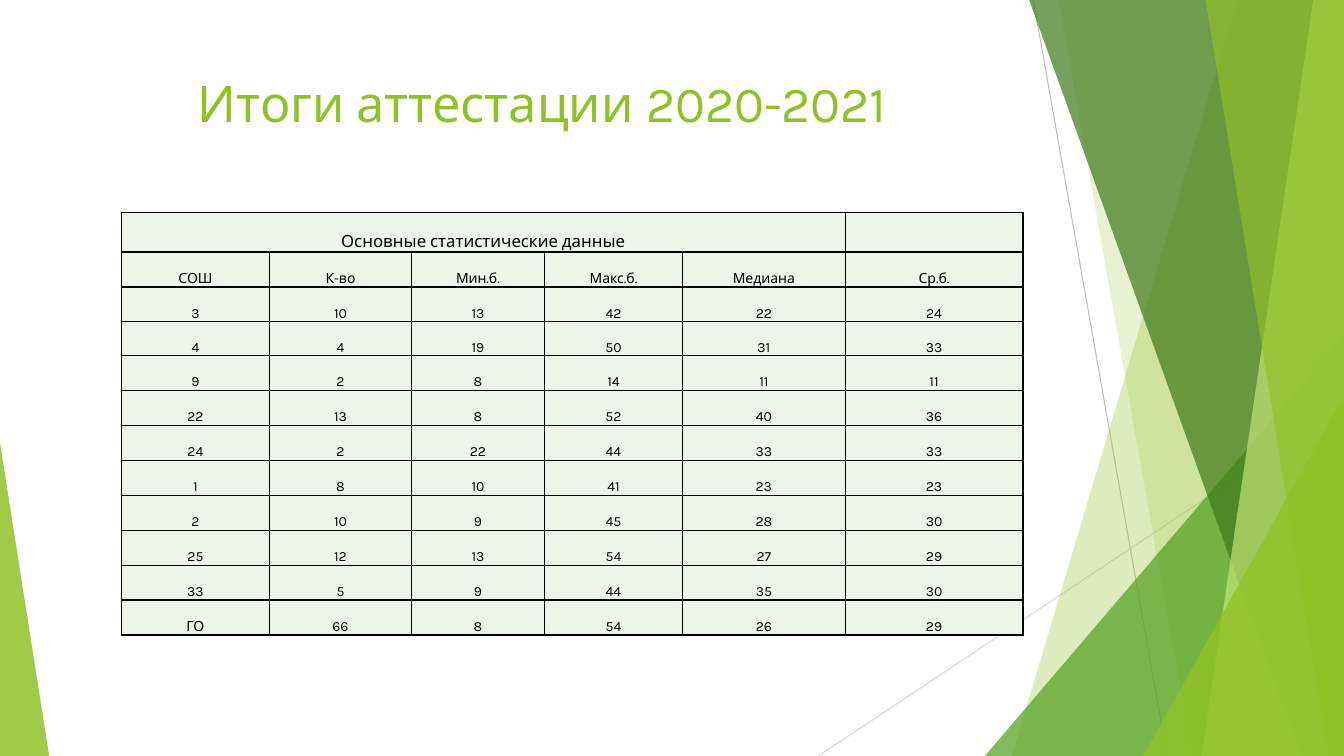
from dataclasses import dataclass

from lxml import etree
from pptx import Presentation
from pptx.dml.color import RGBColor
from pptx.enum.shapes import MSO_CONNECTOR, MSO_SHAPE
from pptx.enum.text import MSO_ANCHOR, PP_ALIGN
from pptx.oxml.ns import qn
from pptx.shapes.autoshape import Shape
from pptx.slide import Slide
from pptx.table import _Cell
from pptx.text.text import _Paragraph
from pptx.util import Cm, Pt

STRAIGHT = MSO_CONNECTOR.STRAIGHT
TRIANGLE = MSO_SHAPE.ISOSCELES_TRIANGLE
CENTER = PP_ALIGN.CENTER
BOTTOM = MSO_ANCHOR.BOTTOM
TOP = MSO_ANCHOR.TOP

FONT = "Karla"
WIDTH, HEIGHT = 33.87, 19.05
COLORS = {
    "lime": "90C226",
    "green": "54A021",
    "forest": "3F7819",
    "pale": "C0E474",
    "line_dark": "BFBFBF",
    "line_light": "D9D9D9",
    "cell": "EEF4E8",
    "black": "000000",
}


@dataclass
class Ray:
    start: tuple[float, float]
    end: tuple[float, float]
    color: str


@dataclass
class Facet:
    top_left: float
    bottom_left: float
    color: str
    opacity: int


@dataclass
class Corner:
    left: float
    top: float
    width: float
    apex: float
    color: str
    opacity: int


RAYS = [
    Ray((26.04, 0), (29.41, HEIGHT), "line_dark"),
    Ray((WIDTH, 10.24), (20.62, HEIGHT), "line_light"),
]
DECORATION = [
    Facet(31.19, 25.5, "lime", 30),
    Facet(26.67, 30.05, "lime", 20),
    Corner(24.82, 8.46, 9.05, 1, "green", 72),
    Facet(25.93, 32.79, "forest", 70),
    Facet(33.1, 30.28, "pale", 70),
    Facet(30.38, 33.48, "lime", 65),
    Corner(28.81, 9.98, 5.06, 1, "lime", 80),
    Corner(0, 11.15, 1.24, 0, "lime", 85),
]

TABLE_TITLE = "Основные статистические данные"
COLUMN_WIDTHS = [3.73, 3.58, 3.35, 3.48, 4.1, 4.48]
ROW_HEIGHTS = [1.0, 0.88, 0.88, 0.85] + [0.88] * 8
ROWS = [
    ("СОШ", "К-во", "Мин.б.", "Макс.б.", "Медиана", "Ср.б."),
    ("3", "10", "13", "42", "22", "24"),
    ("4", "4", "19", "50", "31", "33"),
    ("9", "2", "8", "14", "11", "11"),
    ("22", "13", "8", "52", "40", "36"),
    ("24", "2", "22", "44", "33", "33"),
    ("1", "8", "10", "41", "23", "23"),
    ("2", "10", "9", "45", "28", "30"),
    ("25", "12", "13", "54", "27", "29"),
    ("33", "5", "9", "44", "35", "30"),
    ("ГО", "66", "8", "54", "26", "29"),
]


def rgb(name: str) -> RGBColor:
    return RGBColor.from_string(COLORS[name])


def add_text(paragraph: _Paragraph, text: str, size: float, color: str) -> None:
    paragraph.alignment = CENTER
    run = paragraph.add_run()
    run.text = text
    run.font.name = FONT
    run.font.size = Pt(size)
    run.font.color.rgb = rgb(color)


def draw_ray(slide: Slide, ray: Ray) -> None:
    connector = slide.shapes.add_connector(
        STRAIGHT, *(Cm(value) for value in ray.start + ray.end)
    )
    connector.line.color.rgb = rgb(ray.color)
    connector.line.width = Pt(0.75)
    etree.SubElement(connector.element.spPr, qn("a:effectLst"))


def paint(shape: Shape, color: str, opacity: int) -> None:
    shape.shadow.inherit = False
    shape.line.fill.background()
    shape.fill.solid()
    shape.fill.fore_color.rgb = rgb(color)
    color_element = shape.element.spPr.find(qn("a:solidFill"))[0]
    etree.SubElement(color_element, qn("a:alpha"), val=str(opacity * 1000))


def draw_facet(slide: Slide, facet: Facet) -> None:
    builder = slide.shapes.build_freeform(Cm(facet.top_left), Cm(-0.02))
    builder.add_line_segments([
        (Cm(WIDTH), Cm(-0.02)),
        (Cm(WIDTH), Cm(HEIGHT)),
        (Cm(facet.bottom_left), Cm(HEIGHT)),
    ])
    paint(builder.convert_to_shape(), facet.color, facet.opacity)


def draw_corner(slide: Slide, corner: Corner) -> None:
    shape = slide.shapes.add_shape(
        TRIANGLE, Cm(corner.left), Cm(corner.top),
        Cm(corner.width), Cm(HEIGHT - corner.top),
    )
    shape.adjustments[0] = corner.apex
    paint(shape, corner.color, corner.opacity)


def draw_title(slide: Slide) -> None:
    box = slide.shapes.add_textbox(Cm(1.88), Cm(1.7), Cm(23.88), Cm(3.66))
    box.text_frame.word_wrap = True
    box.text_frame.vertical_anchor = TOP
    add_text(box.text_frame.paragraphs[0], "Итоги аттестации 2020-2021 ", 36, "lime")


def style_cell(cell: _Cell) -> None:
    cell.margin_left = cell.margin_right = cell.margin_top = Cm(0.02)
    cell.margin_bottom = 0
    cell.vertical_anchor = BOTTOM
    properties = cell._tc.get_or_add_tcPr()
    for side in ("lnL", "lnR", "lnT", "lnB"):
        border = etree.SubElement(properties, qn(f"a:{side}"), w=str(Pt(1)))
        fill = etree.SubElement(border, qn("a:solidFill"))
        etree.SubElement(fill, qn("a:srgbClr"), val=COLORS["black"])
    cell.fill.solid()
    cell.fill.fore_color.rgb = rgb("cell")


def draw_table(slide: Slide) -> None:
    table = slide.shapes.add_table(
        len(ROW_HEIGHTS), len(COLUMN_WIDTHS), Cm(3.06), Cm(5.35),
        Cm(sum(COLUMN_WIDTHS)), Cm(sum(ROW_HEIGHTS)),
    ).table
    table.first_row = table.horz_banding = False
    for column, width in zip(table.columns, COLUMN_WIDTHS):
        column.width = Cm(width)
    for row, height in zip(table.rows, ROW_HEIGHTS):
        row.height = Cm(height)
    for cell in table.iter_cells():
        style_cell(cell)
    heading = table.cell(0, 0)
    heading.merge(table.cell(0, 4))
    add_text(heading.text_frame.paragraphs[0], TABLE_TITLE, 12, "black")
    for row_index, values in enumerate(ROWS, start=1):
        for column_index, value in enumerate(values):
            cell = table.cell(row_index, column_index)
            add_text(cell.text_frame.paragraphs[0], value, 10, "black")


def main() -> None:
    presentation = Presentation()
    presentation.slide_width = Cm(WIDTH)
    presentation.slide_height = Cm(HEIGHT)
    slide = presentation.slides.add_slide(presentation.slide_layouts[6])
    for ray in RAYS:
        draw_ray(slide, ray)
    for item in DECORATION:
        if isinstance(item, Facet):
            draw_facet(slide, item)
        else:
            draw_corner(slide, item)
    draw_title(slide)
    draw_table(slide)
    presentation.save("out.pptx")


if __name__ == "__main__":
    main()
